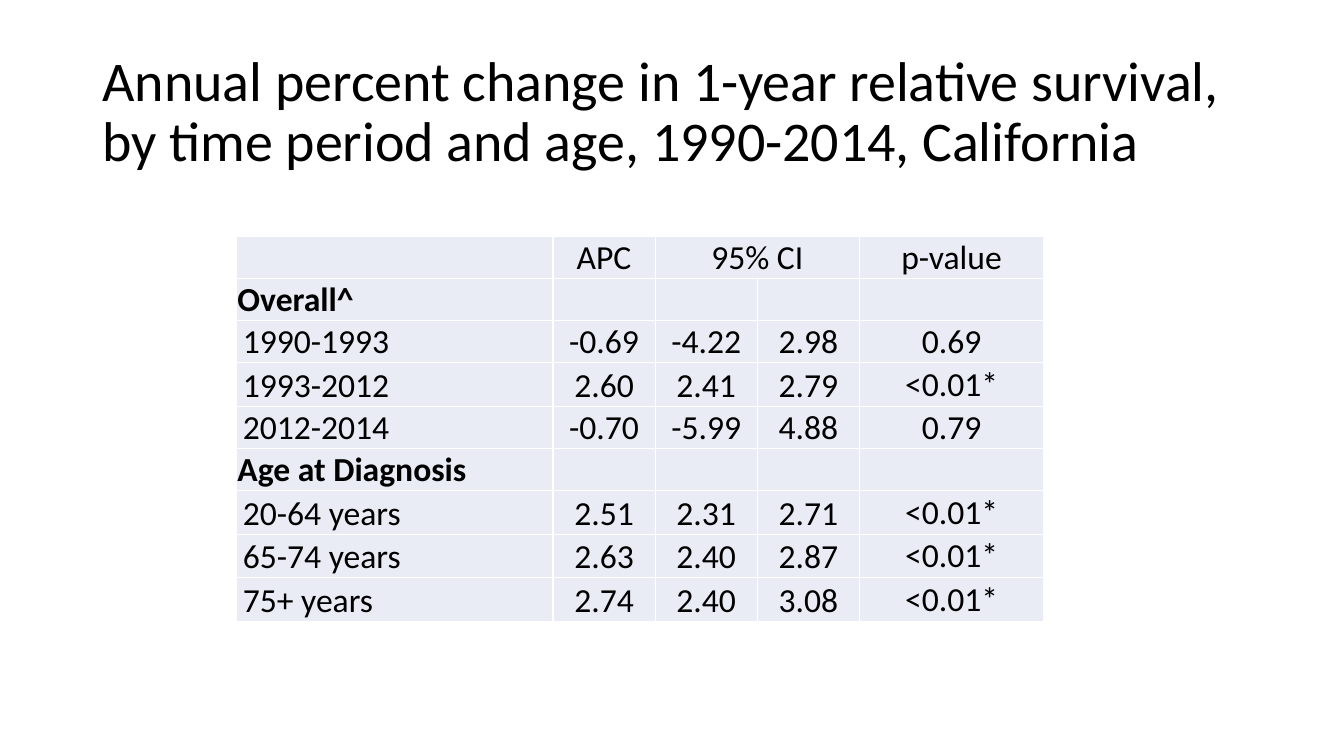
from pptx import Presentation
from pptx.dml.color import RGBColor
from pptx.enum.text import MSO_ANCHOR, MSO_AUTO_SIZE, PP_ALIGN
from pptx.oxml import parse_xml
from pptx.oxml.ns import nsdecls
from pptx.util import Pt


def color(code):
    return RGBColor.from_string(code)


def style(par, size, align, bold=False):
    par.alignment = align
    for run in par.runs:
        font = run.font
        font.name = "Calibri"
        font.size = Pt(size)
        font.bold = bold
        font.color.rgb = color("000000")


prs = Presentation()
prs.slide_width, prs.slide_height = Pt(960), Pt(540)
slide = prs.slides.add_slide(prs.slide_layouts[5])

# Title
title = slide.shapes.title
title.left, title.top, title.width, title.height = Pt(66), Pt(28.75), Pt(828), Pt(104.4)
frame = title.text_frame
frame.text = ("Annual percent change in 1-year relative survival, "
              "by time period and age, 1990-2014, California")
frame.word_wrap = True
frame.auto_size = MSO_AUTO_SIZE.NONE
frame.vertical_anchor = MSO_ANCHOR.MIDDLE
frame.paragraphs[0].line_spacing = 0.9
style(frame.paragraphs[0], 40, PP_ALIGN.LEFT)

# Survival figures
rows = [
    ["", "APC", "95% CI", "", "p-value"],
    ["Overall^", "", "", "", ""],
    ["1990-1993", "-0.69", "-4.22", "2.98", "0.69"],
    ["1993-2012", "2.60", "2.41", "2.79", "<0.01*"],
    ["2012-2014", "-0.70", "-5.99", "4.88", "0.79"],
    ["Age at Diagnosis", "", "", "", ""],
    ["20-64 years", "2.51", "2.31", "2.71", "<0.01*"],
    ["65-74 years", "2.63", "2.40", "2.87", "<0.01*"],
    ["75+ years", "2.74", "2.40", "3.08", "<0.01*"],
]
widths = [226, 73, 73, 73, 131.5]
heights = [31.2 if "<0.01*" in row else 30 for row in rows]

# Table grid
table = slide.shapes.add_table(len(rows), len(widths), Pt(169), Pt(169.2),
                               Pt(sum(widths)), Pt(sum(heights))).table
table.first_row = False
table.horz_banding = False
for col, width in zip(table.columns, widths):
    col.width = Pt(width)
for line, height in zip(table.rows, heights):
    line.height = Pt(height)
table.cell(0, 2).merge(table.cell(0, 3))

# Cells
for r, row in enumerate(rows):
    group = r > 0 and not row[1]
    for c, text in enumerate(row):
        cell = table.cell(r, c)
        indent = c == 0 and not group
        cell.margin_left = Pt(4.5 if indent else 0.6)
        cell.margin_top = cell.margin_right = Pt(0.6)
        cell.margin_bottom = Pt(0)
        middle = c == 4 and r > 0
        cell.vertical_anchor = MSO_ANCHOR.MIDDLE if middle else MSO_ANCHOR.BOTTOM
        props = cell._tc.get_or_add_tcPr()
        for side in ("lnL", "lnR", "lnT", "lnB"):
            props.append(parse_xml(
                f'<a:{side} {nsdecls("a")} w="{Pt(1)}"><a:solidFill>'
                f'<a:srgbClr val="FFFFFF"/></a:solidFill></a:{side}>'))
        cell.fill.solid()
        cell.fill.fore_color.rgb = color("E9EBF5")
        if text:
            cell.text_frame.text = text
            style(cell.text_frame.paragraphs[0], 24,
                  PP_ALIGN.CENTER if c else PP_ALIGN.LEFT, group)

prs.save("out.pptx")
